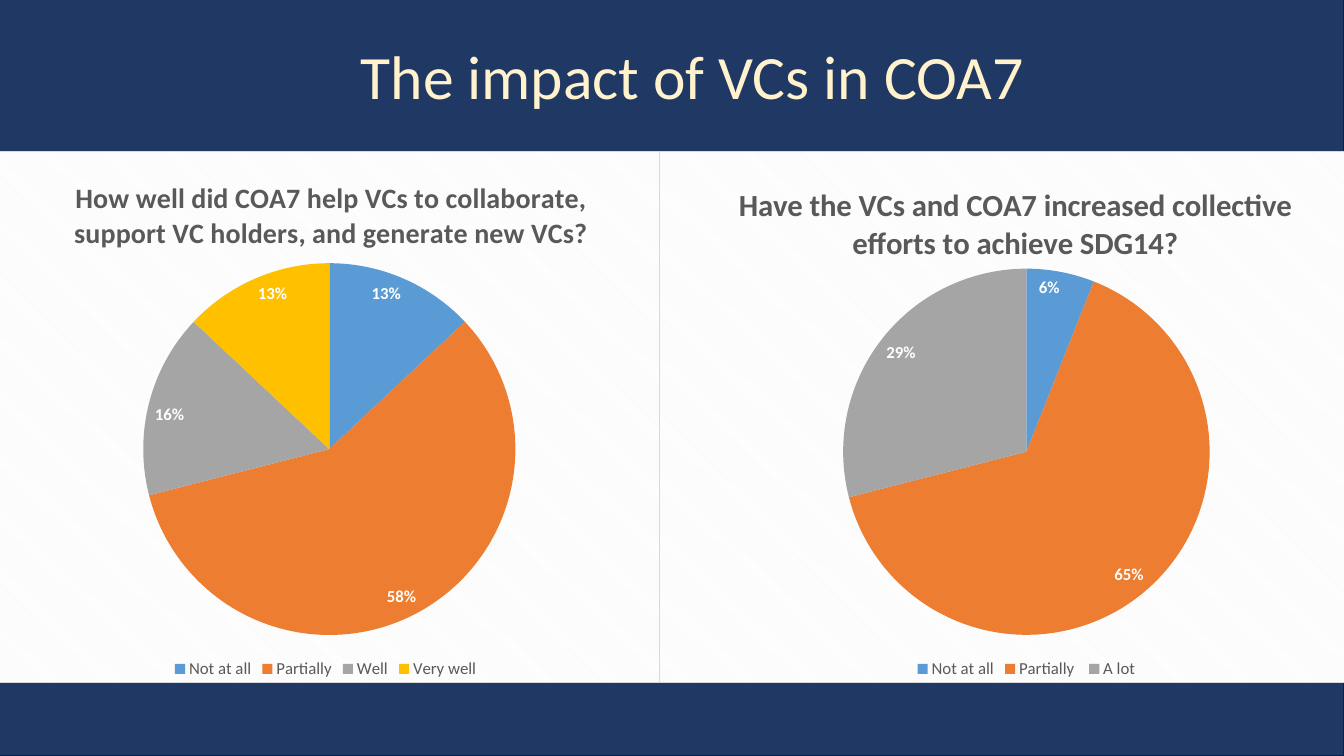
from dataclasses import dataclass
from typing import Any

import lxml.etree
import pptx
import pptx.chart.chart
import pptx.chart.data
import pptx.dml.color
import pptx.enum.chart
import pptx.enum.shapes
import pptx.enum.text
import pptx.oxml
import pptx.oxml.ns
import pptx.slide
import pptx.util
from pptx.util import Inches

RGBColor = pptx.dml.color.RGBColor
NAVY = RGBColor(0x20, 0x38, 0x64)
DARK_NAVY = RGBColor(0x00, 0x20, 0x60)
CREAM = RGBColor(0xFF, 0xF2, 0xCC)
GREY = RGBColor(0x59, 0x59, 0x59)
WHITE = RGBColor(0xFF, 0xFF, 0xFF)
BLACK = RGBColor(0x00, 0x00, 0x00)
ANSWER_COLOURS = (
    RGBColor(0x5B, 0x9B, 0xD5),
    RGBColor(0xED, 0x7D, 0x31),
    RGBColor(0xA5, 0xA5, 0xA5),
    RGBColor(0xFF, 0xC0, 0x00),
)
FONT = "Calibri"

PANEL_FORMAT = (
    f'<c:spPr {pptx.oxml.ns.nsdecls("c", "a")}>'
    '<a:pattFill prst="dkDnDiag"><a:fgClr><a:srgbClr val="F2F2F2"/></a:fgClr>'
    '<a:bgClr><a:srgbClr val="FFFFFF"/></a:bgClr></a:pattFill>'
    '<a:ln w="9525"><a:solidFill><a:srgbClr val="D9D9D9"/></a:solidFill></a:ln>'
    "</c:spPr>"
)


@dataclass(frozen=True)
class Survey:
    question: str
    question_size: int
    answers: dict[str, int]
    left: float
    question_place: dict[str, float]
    pie_place: dict[str, float]


SURVEYS = (
    Survey(
        "How well did COA7 help VCs to collaborate, support VC holders, and generate new VCs?",
        20,
        {"Not at all": 13, "Partially": 58, "Well": 16, "Very well": 13},
        -0.41,
        {"x": 0.15, "y": 0.04},
        {"x": 0.25, "y": 0.21, "w": 0.51, "h": 0.7},
    ),
    Survey(
        "Have the VCs and COA7 increased collective efforts to achieve SDG14?",
        22,
        {"Not at all": 6, "Partially ": 65, "A lot": 29},
        6.54,
        {"x": 0.1, "y": 0.05},
        {"x": 0.25, "y": 0.22, "w": 0.5, "h": 0.69},
    ),
)


def apply_format(target: Any, values: dict[str, Any]) -> None:
    for name, value in values.items():
        setattr(target, name, value)


def format_font(font: Any, size: int, colour: RGBColor, bold: bool = False) -> None:
    apply_format(font, {"name": FONT, "size": pptx.util.Pt(size), "bold": bold})
    font.color.rgb = colour


def place_part(part: Any, index: int, place: dict[str, float]) -> None:
    """Give a chart part a manual layout in fractions of the chart."""
    qn = pptx.oxml.ns.qn
    for old_layout in part.findall(qn("c:layout")):
        part.remove(old_layout)
    layout = lxml.etree.Element(qn("c:layout"))
    manual = lxml.etree.SubElement(layout, qn("c:manualLayout"))
    if "w" in place:
        lxml.etree.SubElement(manual, qn("c:layoutTarget"), val="inner")
    for axis in ("x", "y"):
        lxml.etree.SubElement(manual, qn(f"c:{axis}Mode"), val="edge")
    for name, value in place.items():
        lxml.etree.SubElement(manual, qn(f"c:{name}"), val=str(value))
    part.insert(index, layout)


def add_survey(slide: pptx.slide.Slide, survey: Survey) -> None:
    data = pptx.chart.data.CategoryChartData()
    data.categories = list(survey.answers)
    data.add_series("Series 1", list(survey.answers.values()))
    chart = slide.shapes.add_chart(
        pptx.enum.chart.XL_CHART_TYPE.PIE,
        Inches(survey.left), Inches(1.5), Inches(7.28), Inches(5.28), data,
    ).chart
    format_font(chart.font, 10, BLACK)

    # Question
    chart.has_title = True
    question = chart.chart_title.text_frame.paragraphs[0]
    question_run = question.add_run()
    question_run.text = survey.question
    format_font(question_run.font, survey.question_size, GREY, bold=True)

    # Legend
    chart.has_legend = True
    apply_format(chart.legend, {
        "position": pptx.enum.chart.XL_LEGEND_POSITION.BOTTOM,
        "include_in_layout": False,
    })
    format_font(chart.legend.font, 12, GREY)

    # Slices and percentages
    plot = chart.plots[0]
    apply_format(plot, {"vary_by_categories": True, "has_data_labels": True})
    for index, colour in zip(range(len(survey.answers)), ANSWER_COLOURS):
        fill = plot.series[0].points[index].format.fill
        fill.solid()
        fill.fore_color.rgb = colour
    apply_format(plot.data_labels, {
        "show_percentage": True,
        "show_value": False,
        "number_format": "0%",
        "number_format_is_linked": False,
        "position": pptx.enum.chart.XL_LABEL_POSITION.INSIDE_END,
    })
    format_font(plot.data_labels.font, 12, WHITE, bold=True)

    # Hatched panel and layout
    chart_part = chart.element.find(pptx.oxml.ns.qn("c:chart"))
    chart_part.addnext(pptx.oxml.parse_xml(PANEL_FORMAT))
    place_part(chart_part.find(pptx.oxml.ns.qn("c:title")), 1, survey.question_place)
    place_part(chart_part.find(pptx.oxml.ns.qn("c:plotArea")), 0, survey.pie_place)


def add_backdrop(slide: pptx.slide.Slide, width: int, height: int) -> None:
    slide.background.fill.solid()
    slide.background.fill.fore_color.rgb = NAVY
    backdrop = slide.shapes.add_shape(
        pptx.enum.shapes.MSO_SHAPE.RECTANGLE, 0, 0, width, height
    )
    backdrop.shadow.inherit = False
    backdrop.fill.solid()
    backdrop.fill.fore_color.rgb = NAVY
    backdrop.line.color.rgb = DARK_NAVY
    backdrop.line.width = 0
    slide.shapes.element.insert(2, backdrop.element)


def add_heading(slide: pptx.slide.Slide) -> None:
    heading = slide.shapes.title
    apply_format(heading, {
        "left": Inches(2.73), "top": Inches(0.41),
        "width": Inches(8.28), "height": Inches(1.45),
    })
    apply_format(heading.text_frame, {
        "text": "The impact of VCs in COA7",
        "word_wrap": True,
        "vertical_anchor": pptx.enum.text.MSO_ANCHOR.TOP,
    })
    paragraph = heading.text_frame.paragraphs[0]
    apply_format(paragraph, {
        "alignment": pptx.enum.text.PP_ALIGN.CENTER,
        "line_spacing": 0.9,
        "space_before": pptx.util.Pt(0),
    })
    format_font(paragraph.runs[0].font, 44, CREAM)


def main() -> None:
    deck = pptx.Presentation()
    apply_format(deck, {"slide_width": Inches(13.33), "slide_height": Inches(7.5)})
    slide = deck.slides.add_slide(deck.slide_layouts.get_by_name("Title Only"))
    add_backdrop(slide, deck.slide_width, deck.slide_height)
    add_heading(slide)
    for survey in SURVEYS:
        add_survey(slide, survey)
    deck.save("out.pptx")


if __name__ == "__main__":
    main()
